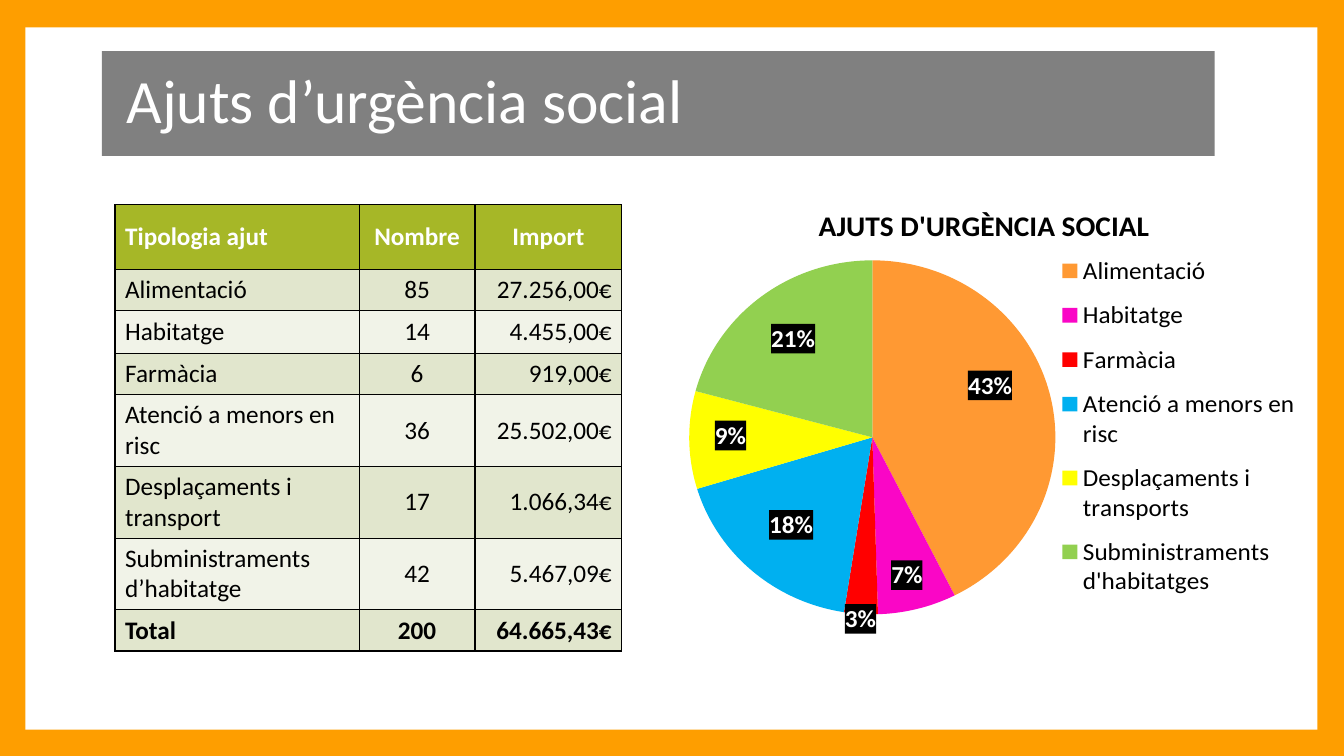
from lxml import etree
from pptx import Presentation, util as u
from pptx.chart.data import CategoryChartData
from pptx.dml.color import RGBColor
from pptx.enum import chart as charts, shapes, text
from pptx.oxml import parse_xml
from pptx.oxml.ns import nsdecls, qn

COLORS = {
    "frame": "FE9E00", "white": "FFFFFF", "black": "000000", "banner": "808080",
    "header": "A6B727", "band_dark": "E1E6CD", "band_light": "F1F3E8",
}
FONT = "Calibri"
AID_ROWS = [
    ("Tipologia ajut", "Nombre", "Import"),
    ("Alimentació", "85", "27.256,00€"),
    ("Habitatge", "14", "4.455,00€"),
    ("Farmàcia", "6", "919,00€"),
    ("Atenció a menors en risc", "36", "25.502,00€"),
    ("Desplaçaments i transport", "17", "1.066,34€"),
    ("Subministraments d’habitatge", "42", "5.467,09€"),
    ("Total", "200", "64.665,43€"),
]
COLUMN_WIDTHS = (6.15, 2.92, 3.7)
ROW_HEIGHTS = (1.63, 1.02, 1.09, 1.04, 1.63, 1.63, 1.63, 1.04)
INSIDE = charts.XL_LABEL_POSITION.INSIDE_END
OUTSIDE = charts.XL_LABEL_POSITION.OUTSIDE_END
AID_SHARES = [
    ("Alimentació", 43, "FF9933", INSIDE, (-0.05, -0.06)),
    ("Habitatge", 7, "FA06C6", INSIDE, (0.01, -0.03)),
    ("Farmàcia", 3, "FF0000", OUTSIDE, (0, 0)),
    ("Atenció a menors en risc", 18, "00B0F0", INSIDE, (0.02, -0.06)),
    ("Desplaçaments i transports", 9, "FFFF00", INSIDE, (0.03, -0.01)),
    ("Subministraments d'habitatges", 21, "92D050", INSIDE, (0.01, 0.05)),
]
CHART_TITLE = "AJUTS D'URGÈNCIA SOCIAL"


def rgb(name):
    """Return the named colour."""
    return RGBColor.from_string(COLORS[name])


def style_font(font, size, color, bold=False):
    """Apply the slide's typeface with a size, colour and weight."""
    font.name, font.size, font.bold = FONT, u.Pt(size), bold
    font.color.rgb = rgb(color)


def add_panel(slide, box, color):
    """Add a plain filled rectangle."""
    panel = slide.shapes.add_shape(shapes.MSO_SHAPE.RECTANGLE, *map(u.Cm, box))
    panel.shadow.inherit = False
    panel.fill.solid()
    panel.fill.fore_color.rgb = rgb(color)
    panel.line.fill.background()
    return panel


def add_banner(slide, box):
    """Add the heading banner."""
    banner = add_panel(slide, box, "banner")
    frame = banner.text_frame
    frame.text = "Ajuts d’urgència social"
    frame.word_wrap = True
    frame.margin_left = u.Cm(0.62)
    frame.vertical_anchor = text.MSO_ANCHOR.MIDDLE
    heading = frame.paragraphs[0]
    heading.alignment = text.PP_ALIGN.LEFT
    heading.line_spacing = 0.9
    style_font(heading.runs[0].font, 44, "white")


def add_borders(cell):
    """Draw a thin black line on all sides of a cell."""
    properties = cell._tc.get_or_add_tcPr()
    for index, side in enumerate("LRTB"):
        properties.insert(index, parse_xml(
            f'<a:ln{side} {nsdecls("a")} w="12700"><a:solidFill>'
            f'<a:srgbClr val="{COLORS["black"]}"/></a:solidFill></a:ln{side}>'))


def add_aid_table(slide, box):
    """Add the table of aid types, counts and amounts."""
    table = slide.shapes.add_table(
        len(AID_ROWS), len(COLUMN_WIDTHS), *map(u.Cm, box)).table
    for column, width in zip(table.columns, COLUMN_WIDTHS):
        column.width = u.Cm(width)
    alignments = (text.PP_ALIGN.LEFT, text.PP_ALIGN.CENTER, text.PP_ALIGN.RIGHT)
    for row, values in enumerate(AID_ROWS):
        table.rows[row].height = u.Cm(ROW_HEIGHTS[row])
        is_header = row == 0
        is_total = row == len(AID_ROWS) - 1
        band = "header" if is_header else "band_dark" if row % 2 else "band_light"
        for column, value in enumerate(values):
            cell = table.cell(row, column)
            cell.text = value
            cell.vertical_anchor = text.MSO_ANCHOR.MIDDLE
            cell.fill.solid()
            cell.fill.fore_color.rgb = rgb(band)
            paragraph = cell.text_frame.paragraphs[0]
            paragraph.alignment = alignments[min(column, 1) if is_header else column]
            style_font(paragraph.runs[0].font, 18,
                       "white" if is_header else "black", is_header or is_total)
            add_borders(cell)


def make_layout(modes=(), **fractions):
    """Return a manual layout in fractions of the chart area."""
    layout = etree.Element(qn("c:layout"))
    manual = etree.SubElement(layout, qn("c:manualLayout"))
    for tag, setting in modes:
        etree.SubElement(manual, qn(f"c:{tag}"), val=setting)
    for key, fraction in fractions.items():
        etree.SubElement(manual, qn(f"c:{key}"), val=str(fraction))
    return layout


def set_layout(element, before, inner=False, **fractions):
    """Place a chart part from the chart's top left corner."""
    for automatic in element.findall(qn("c:layout")):
        element.remove(automatic)
    modes = [("layoutTarget", "inner")] if inner else []
    modes += [("xMode", "edge"), ("yMode", "edge")]
    element.find(qn(before)).addprevious(make_layout(modes, **fractions))


def style_label(label, element, position):
    """Show bold white percentages on black."""
    style_font(label.font, 18, "white", True)
    label.position = position
    element.find(qn("c:showVal")).set("val", "0")
    element.find(qn("c:showPercent")).set("val", "1")
    element.find(qn("c:txPr")).addprevious(parse_xml(
        f'<c:spPr {nsdecls("c", "a")}><a:solidFill>'
        f'<a:srgbClr val="{COLORS["black"]}"/></a:solidFill></c:spPr>'))


def add_aid_pie(slide, box):
    """Add the pie chart of aid shares."""
    data = CategoryChartData()
    names, shares, fills, positions, shifts = zip(*AID_SHARES)
    data.categories = names
    data.add_series(CHART_TITLE, shares)
    chart = slide.shapes.add_chart(
        charts.XL_CHART_TYPE.PIE, *map(u.Cm, box), data).chart
    style_font(chart.font, 18, "black")

    chart.has_title = True
    heading = chart.chart_title.text_frame
    heading.text = CHART_TITLE
    style_font(heading.paragraphs[0].runs[0].font, 21, "black", True)
    set_layout(chart.chart_title._element, "c:overlay", x=0.25, y=0.04)

    chart.has_legend = True
    chart.legend.position = charts.XL_LEGEND_POSITION.RIGHT
    chart.legend.include_in_layout = False
    style_font(chart.legend.font, 18, "black")
    set_layout(chart.legend._element, "c:overlay", x=0.62, y=0.13, w=0.38, h=0.82)

    plot = chart.plots[0]
    plot.vary_by_categories = True
    set_layout(plot._element.getparent(), "c:pieChart", inner=True,
               x=0.06, y=0.16, w=0.56, h=0.81)
    series = plot.series[0]
    labels = series.data_labels
    style_label(labels, labels._element, INSIDE)
    for index, fill in enumerate(fills):
        point = series.points[index]
        point.format.fill.solid()
        point.format.fill.fore_color.rgb = RGBColor.from_string(fill)
        point.data_label.position = positions[index]
        element = labels._element.findall(qn("c:dLbl"))[index]
        style_label(point.data_label, element, positions[index])
        across, down = shifts[index]
        if across or down:
            element.find(qn("c:idx")).addnext(make_layout(x=across, y=down))


def build_aid_slide(presentation):
    """Build the social emergency aid slide."""
    slide = presentation.slides.add_slide(presentation.slide_layouts[6])
    slide.background.fill.solid()
    slide.background.fill.fore_color.rgb = rgb("frame")
    add_panel(slide, (0.64, 0.69, 32.56, 17.7), "white")
    add_banner(slide, (2.57, 1.29, 28.04, 2.64))
    add_aid_table(slide, (2.9, 5.16, sum(COLUMN_WIDTHS), sum(ROW_HEIGHTS)))
    add_aid_pie(slide, (16.38, 4.6, 16.48, 11.76))


def main():
    """Create and save the presentation."""
    presentation = Presentation()
    presentation.slide_width, presentation.slide_height = u.Cm(33.87), u.Cm(19.05)
    build_aid_slide(presentation)
    presentation.save("out.pptx")


if __name__ == "__main__":
    main()
